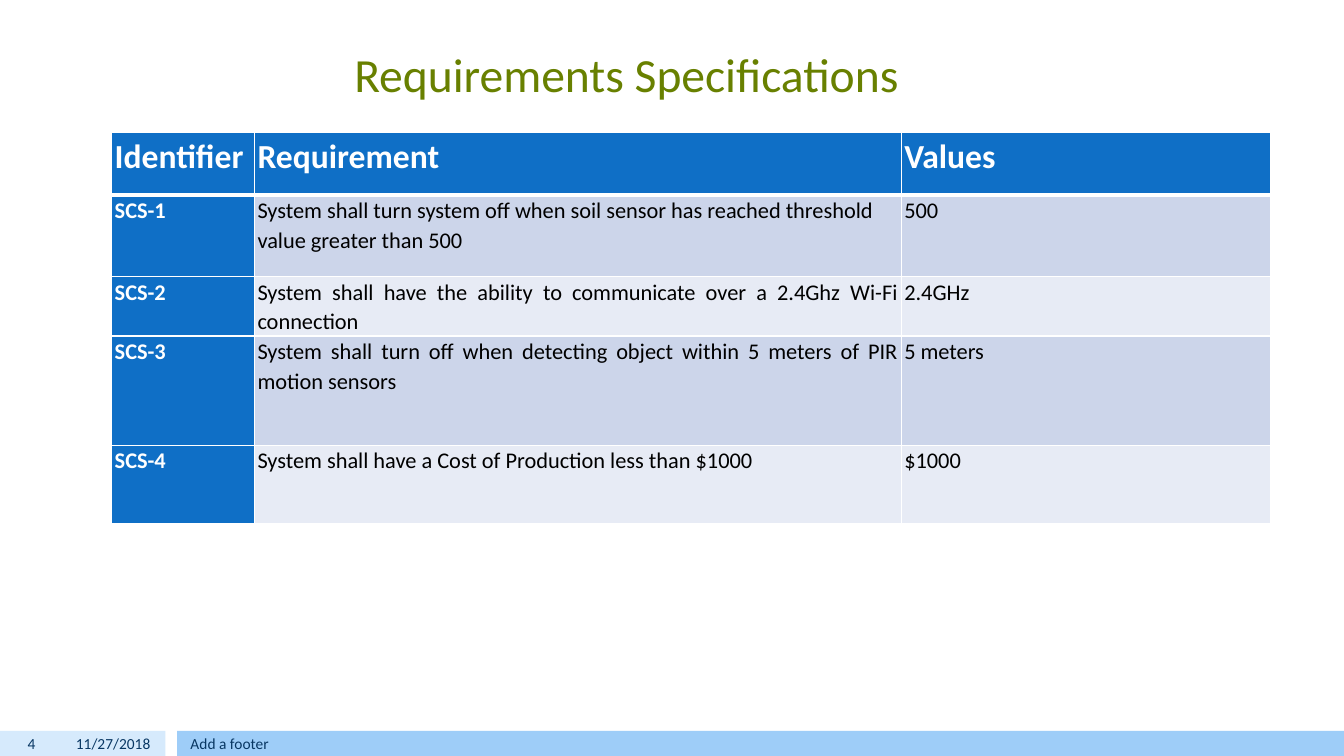
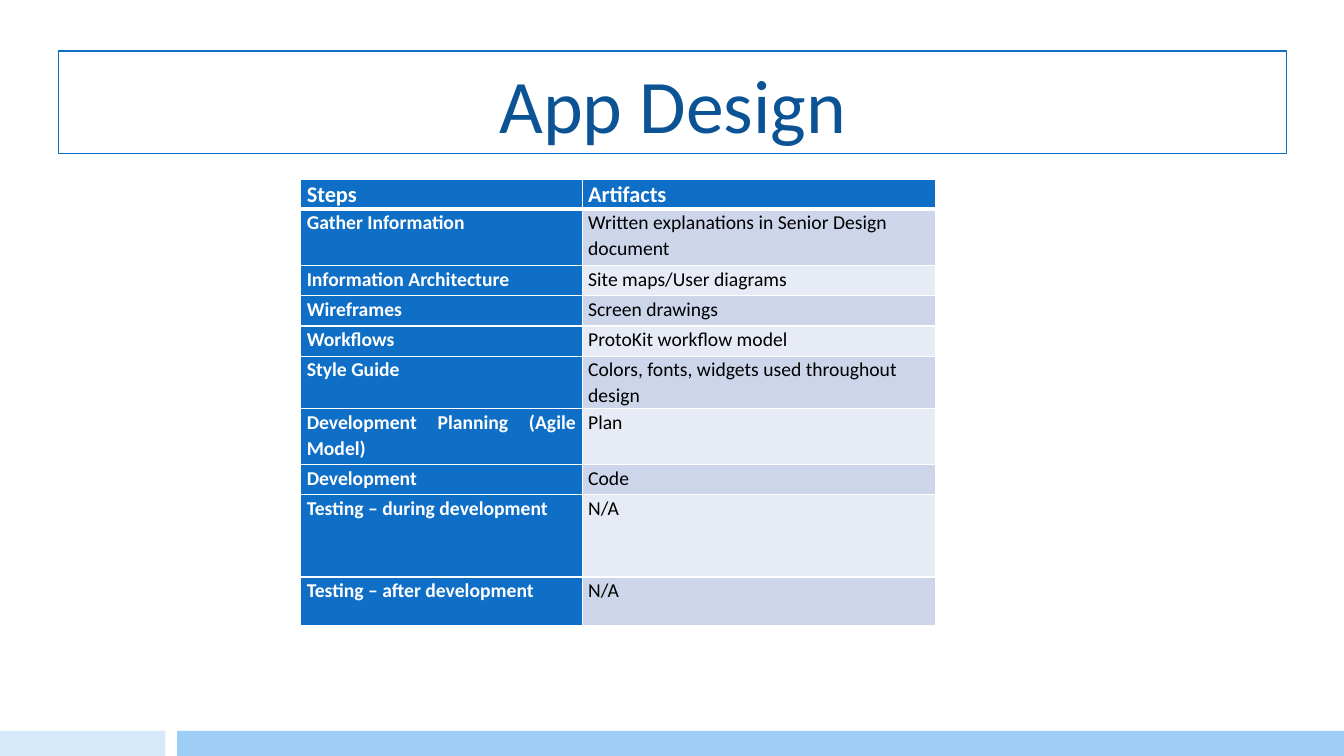
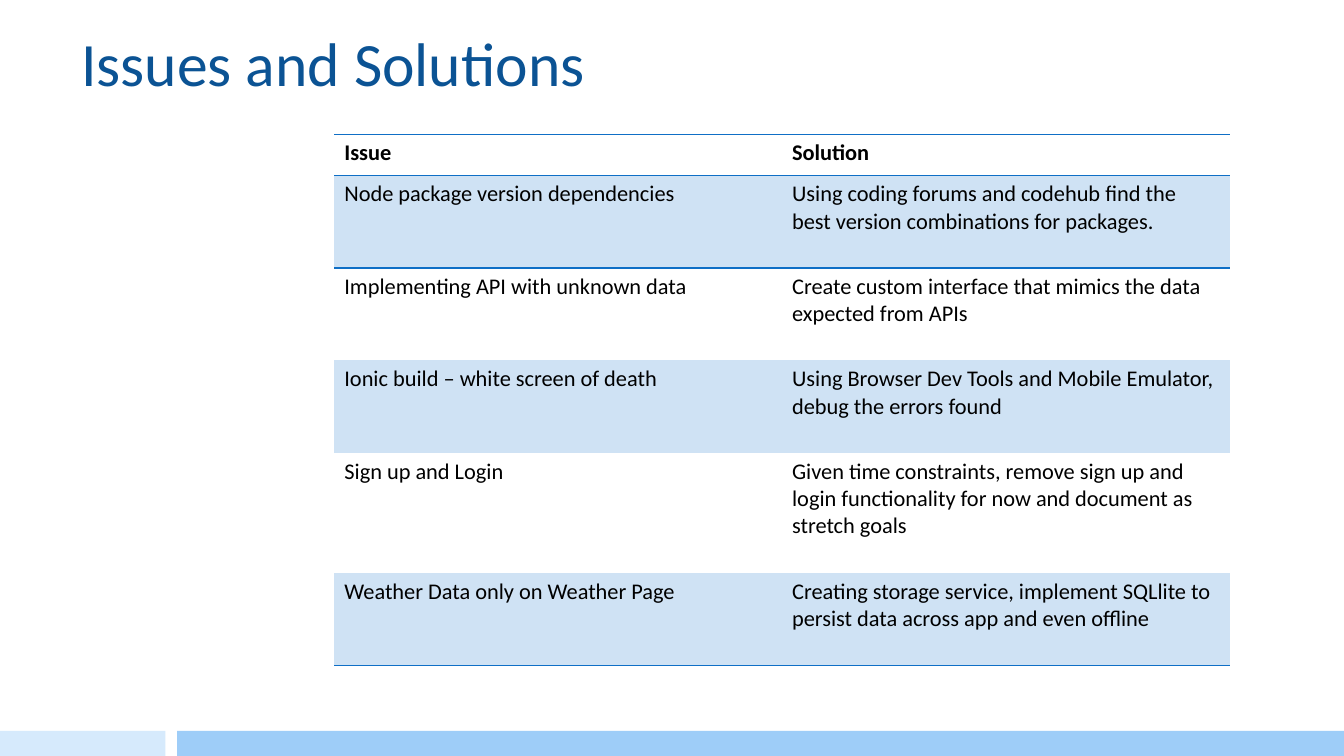
from lxml import etree
from pptx import Presentation
from pptx.dml.color import RGBColor
from pptx.enum.shapes import MSO_SHAPE
from pptx.enum.text import MSO_ANCHOR, PP_ALIGN
from pptx.oxml.ns import qn
from pptx.util import Inches, Pt

RECT = MSO_SHAPE.RECTANGLE
TOP, MID, LOW = MSO_ANCHOR.TOP, MSO_ANCHOR.MIDDLE, MSO_ANCHOR.BOTTOM
LEFT, MIDST, RIGHT, JUST = PP_ALIGN.LEFT, PP_ALIGN.CENTER, PP_ALIGN.RIGHT, PP_ALIGN.JUSTIFY

WHITE = RGBColor(0xFF, 0xFF, 0xFF)
BLACK = RGBColor(0, 0, 0)
BLUE = RGBColor(0x0F, 0x6F, 0xC6)
NAVY = RGBColor(0x0B, 0x53, 0x94)
INK = RGBColor(0x08, 0x37, 0x63)
OLIVE = RGBColor(0x68, 0x80, 0x00)
PALE = RGBColor(0xD6, 0xEA, 0xFC)
SKY = RGBColor(0x9E, 0xCD, 0xF8)
TINT = RGBColor(0xCF, 0xE2, 0xF4)
BANDS = (RGBColor(0xE7, 0xEB, 0xF5), RGBColor(0xCC, 0xD5, 0xEA))

COLS, ROWS = 160, 90
PLAIN = "{2D5ABB26-0587-4C30-8999-92F81FD0307C}"

NEEDS = [
    ("Identifier", "Requirement", "Values"),
    ("SCS-1", "System shall turn system off when soil sensor has reached threshold value greater than 500", "500"),
    ("SCS-2", "System shall have the ability to communicate over a 2.4Ghz Wi-Fi connection", "2.4GHz"),
    ("SCS-3", "System shall turn off when detecting object within 5 meters of PIR motion sensors", "5 meters"),
    ("SCS-4", "System shall have a Cost of Production less than $1000", "$1000"),
]
STEPS = [
    ("Steps", "Artifacts"),
    ("Gather Information", "Written explanations in Senior Design document"),
    ("Information Architecture", "Site maps/User diagrams"),
    ("Wireframes", "Screen drawings"),
    ("Workflows", "ProtoKit workflow model"),
    ("Style Guide", "Colors, fonts, widgets used throughout design"),
    ("Development Planning (Agile Model)", "Plan"),
    ("Development", "Code"),
    ("Testing – during development", "N/A"),
    ("Testing – after development", "N/A"),
]
ISSUES = [
    ("Issue", "Solution"),
    ("Node package version dependencies",
     "Using coding forums and codehub find the best version combinations for packages."),
    ("Implementing API with unknown data",
     "Create custom interface that mimics the data expected from APIs"),
    ("Ionic build – white screen of death",
     "Using Browser Dev Tools and Mobile Emulator, debug the errors found"),
    ("Sign up and Login",
     "Given time constraints, remove sign up and login functionality for now and document as stretch goals"),
    ("Weather Data only on Weather Page",
     "Creating storage service, implement SQLlite to persist data across app and even offline"),
]


class Deck:
    """Holds the shared style and the current slide, placed on a 160 by 90 grid."""

    def __init__(self):
        self.prs = Presentation()
        self.prs.slide_width, self.prs.slide_height = Inches(13.33), Inches(7.5)
        self.wide = self.prs.slide_width / COLS
        self.high = self.prs.slide_height / ROWS

    def place(self, x, y, w, h):
        return [round(n * u) for n, u in zip((x, y, w, h), (self.wide, self.high) * 2)]

    def page(self):
        self.slide = self.prs.slides.add_slide(self.prs.slide_layouts[6])
        self.band((0, 87, 19.7, 3), PALE)
        self.band((21.1, 87, 138.9, 3), SKY)

    def band(self, area, fill, edge=None):
        shape = self.slide.shapes.add_shape(RECT, *self.place(*area))
        shape.shadow.inherit = False
        shape.fill.solid()
        shape.fill.fore_color.rgb = fill
        if edge is None:
            shape.line.fill.background()
        else:
            shape.line.color.rgb = edge
            shape.line.width = Pt(1)
        return shape

    def label(self, frame, text, size, color, bold=False, **form):
        para = frame.paragraphs[0]
        for key, value in form.items():
            setattr(para, key, value)
        run = para.add_run()
        run.text = text
        for key, value in dict(name="Calibri", size=Pt(size), bold=bold).items():
            setattr(run.font, key, value)
        run.font.color.rgb = color

    def text(self, area, text, size, color, align=LEFT, anchor=MID, edge=None):
        if edge is None:
            box = self.slide.shapes.add_textbox(*self.place(*area))
        else:
            box = self.band(area, WHITE, edge)
        frame = box.text_frame
        frame.word_wrap = True
        frame.vertical_anchor = anchor
        self.label(frame, text, size, color, alignment=align)

    def foot(self, page, date, note):
        for area, text, align in (((0, 87, 5.4, 3), page, RIGHT),
                                  ((6, 87, 13.1, 3), date, RIGHT),
                                  ((21.5, 87, 120, 3), note, LEFT)):
            self.text(area, text, 11, INK, align)

    def edge(self, cell, side, color, width):
        line = etree.SubElement(cell._tc.get_or_add_tcPr(), qn("a:ln" + side), w=str(Pt(width)))
        fill = etree.SubElement(line, qn("a:solidFill"))
        etree.SubElement(fill, qn("a:srgbClr"), val=str(color))

    def table(self, x, y, cols, rows, data, style):
        area = self.place(x, y, sum(cols), sum(rows))
        frame = self.slide.shapes.add_table(len(rows), len(cols), *area)
        table = frame.table
        table.first_row = table.horz_banding = False
        table._tbl.tblPr[0].text = PLAIN
        for col, width in zip(table.columns, cols):
            col.width = round(width * self.wide)
        for row, height in zip(table.rows, rows):
            row.height = round(height * self.high)
        for i, line in enumerate(data):
            for j, text in enumerate(line):
                cell = table.cell(i, j)
                look = style(i, j, len(data))
                for key, value in look["pad"].items():
                    setattr(cell, key, value)
                for side, (color, width) in look["edges"].items():
                    self.edge(cell, side, color, width)
                if look["fill"] is None:
                    cell.fill.background()
                else:
                    cell.fill.solid()
                    cell.fill.fore_color.rgb = look["fill"]
                self.label(cell.text_frame, text, **look["text"])


def grid(pad, head, body, just):
    """Return a style with a blue head row and head column over two-tone bands."""
    sides = Inches(pad)

    def style(i, j, count):
        lead = i == 0 or j == 0
        return dict(
            pad=dict(margin_left=sides, margin_right=sides, margin_top=0, margin_bottom=0),
            edges={"L": (WHITE, 1), "R": (WHITE, 1),
                   "T": (WHITE, 3 if i == 1 else 1), "B": (WHITE, 1 if i else 3)},
            fill=BLUE if lead else BANDS[i % 2],
            text=dict(size=body if i else head, color=WHITE if lead else BLACK, bold=lead,
                      alignment=JUST if just(i, j) else LEFT,
                      line_spacing=1.09, space_after=Pt(13.9)))
    return style


def light(i, j, count):
    """Return the look of a cell in a table ruled above, below and under its head."""
    edges = {"T": (BLUE, 1)} if i < 2 else {}
    if i in (0, count - 1):
        edges["B"] = (BLUE, 1)
    return dict(pad={}, edges=edges, fill=TINT if i % 2 else None,
                text=dict(size=16, color=BLACK, bold=i == 0))


def main():
    """Build the three slides and save them."""
    deck = Deck()

    deck.page()
    deck.foot("4", "11/27/2018", "Add a footer")
    deck.table(13.3, 15.8, (17, 77, 44), (7.4, 9.7, 7.1, 13, 9.4), NEEDS,
               grid(0.03, 24, 16, lambda i, j: i > 1))
    deck.text((41, 4.8, 69.4, 8), "Requirements Specifications", 34, OLIVE, anchor=TOP)

    deck.page()
    deck.text((7, 6.1, 146.2, 12.2), "App Design", 54, NAVY, MIDST, LOW, BLUE)
    deck.table(35.8, 21.3, (33.5, 42.1), (3.6, 6.7, 3.6, 3.6, 3.6, 6.2, 6.7, 3.6, 9.8, 5.8),
               STEPS, grid(0.06, 16, 14, lambda i, j: j == 0))

    deck.page()
    deck.text((8.5, 0, 138, 12.4), "Issues and Solutions", 44, NAVY, anchor=LOW)
    deck.table(39.8, 16, (53.3, 53.3), (4.9, 11, 11, 11, 14.3, 11), ISSUES, light)

    deck.prs.save("out.pptx")


if __name__ == "__main__":
    main()
